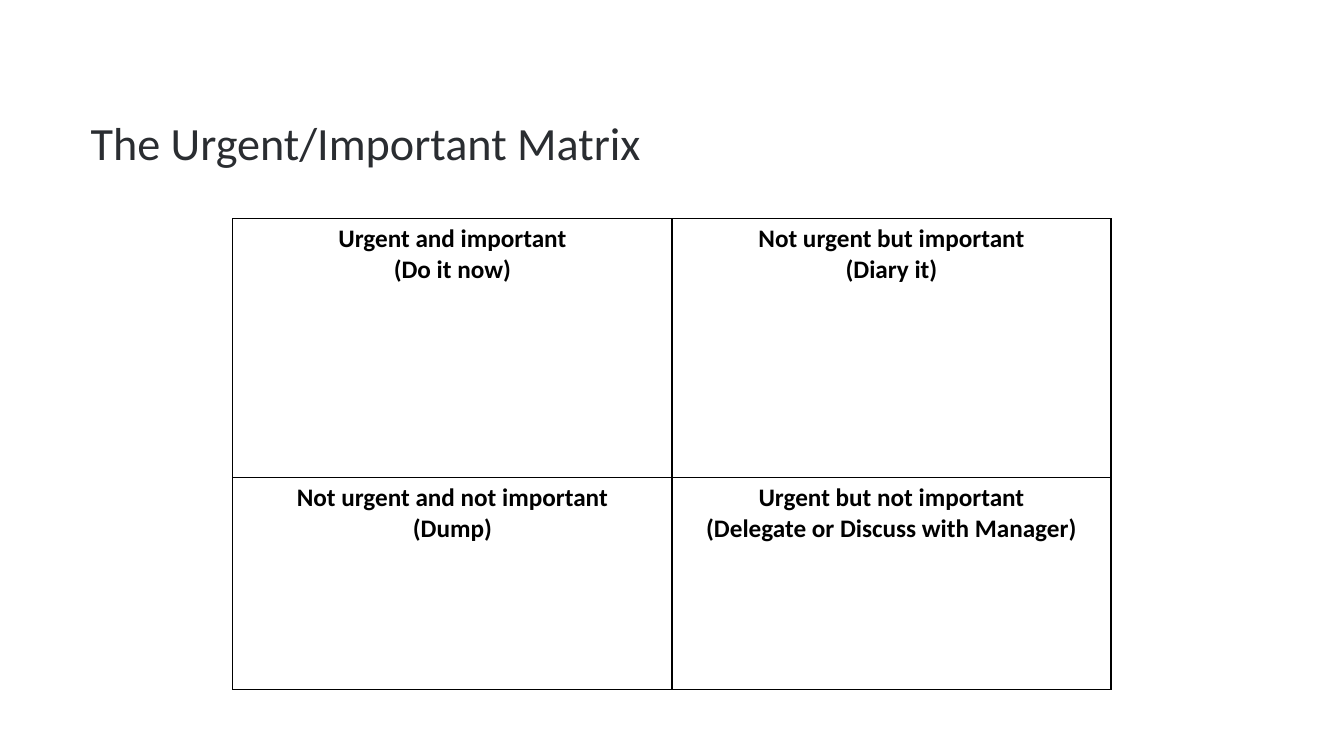
from lxml import etree
from pptx import Presentation
from pptx.dml.color import RGBColor
from pptx.enum.text import MSO_ANCHOR, PP_ALIGN
from pptx.oxml.ns import qn
from pptx.util import Inches, Pt

MIDDLE = MSO_ANCHOR.MIDDLE
CENTER = PP_ALIGN.CENTER
LEFT = PP_ALIGN.LEFT
BLACK = RGBColor(0x00, 0x00, 0x00)
WHITE = RGBColor(0xFF, 0xFF, 0xFF)
SLATE = RGBColor(0x2A, 0x2D, 0x31)

SLIDE_WIDTH, SLIDE_HEIGHT = 13.33, 7.5
TITLE_BOX = (0.8, 0.72, 11.44, 1.45)
MATRIX_BOX = (2.31, 2.17, 8.71, 4.67)
ROW_SHARES = (0.55, 0.45)
BORDER_WIDTH = Pt(1)

TITLE_FORMAT = {"name": "Calibri", "size": Pt(33), "bold": False}
CELL_FORMAT = {"name": "Calibri", "size": Pt(18), "bold": True}

QUADRANTS = (
    (("Urgent and important", "(Do it now)"),
     ("Not urgent but important", "(Diary it)")),
    (("Not urgent and not important", "(Dump)"),
     ("Urgent but not important", "(Delegate or Discuss with Manager)")),
)


def write_lines(frame, lines, font_format, color, align):
    """Write each line as one formatted paragraph."""
    for index, line in enumerate(lines):
        para = frame.add_paragraph() if index else frame.paragraphs[0]
        para.alignment = align
        span = para.add_run()
        span.text = line
        for name, value in font_format.items():
            setattr(span.font, name, value)
        span.font.color.rgb = color


def add_title(page, box, text):
    """Place the slide title, centred vertically in its box."""
    frame = page.shapes.add_textbox(*map(Inches, box)).text_frame
    frame.word_wrap = True
    frame.vertical_anchor = MIDDLE
    write_lines(frame, [text], TITLE_FORMAT, SLATE, LEFT)
    frame.paragraphs[0].line_spacing = 0.9


def add_borders(cell, color):
    """Draw a solid line on all four sides of a cell."""
    properties = cell._tc.get_or_add_tcPr()
    for index, side in enumerate(("a:lnL", "a:lnR", "a:lnT", "a:lnB")):
        line = etree.Element(qn(side), w=str(BORDER_WIDTH))
        fill = etree.SubElement(line, qn("a:solidFill"))
        etree.SubElement(fill, qn("a:srgbClr"), val=str(color))
        properties.insert(index, line)


def add_matrix(page, box, quadrants):
    """Place the matrix as a bordered table filling its box."""
    left, top, width, height = box
    column_count = len(quadrants[0])
    table = page.shapes.add_table(
        len(quadrants), column_count, *map(Inches, box)).table
    table.first_row = False
    table.horz_banding = False
    for column in table.columns:
        column.width = Inches(width / column_count)
    for row, share, entries in zip(table.rows, ROW_SHARES, quadrants):
        row.height = Inches(height * share)
        for cell, lines in zip(row.cells, entries):
            cell.fill.solid()
            cell.fill.fore_color.rgb = WHITE
            add_borders(cell, BLACK)
            write_lines(cell.text_frame, lines, CELL_FORMAT, BLACK, CENTER)


def main():
    """Build the deck and save it."""
    deck = Presentation()
    deck.slide_width = Inches(SLIDE_WIDTH)
    deck.slide_height = Inches(SLIDE_HEIGHT)
    page = deck.slides.add_slide(deck.slide_layouts[6])
    page.background.fill.solid()
    page.background.fill.fore_color.rgb = WHITE
    add_matrix(page, MATRIX_BOX, QUADRANTS)
    add_title(page, TITLE_BOX, "The Urgent/Important Matrix")
    deck.save("out.pptx")


if __name__ == "__main__":
    main()
